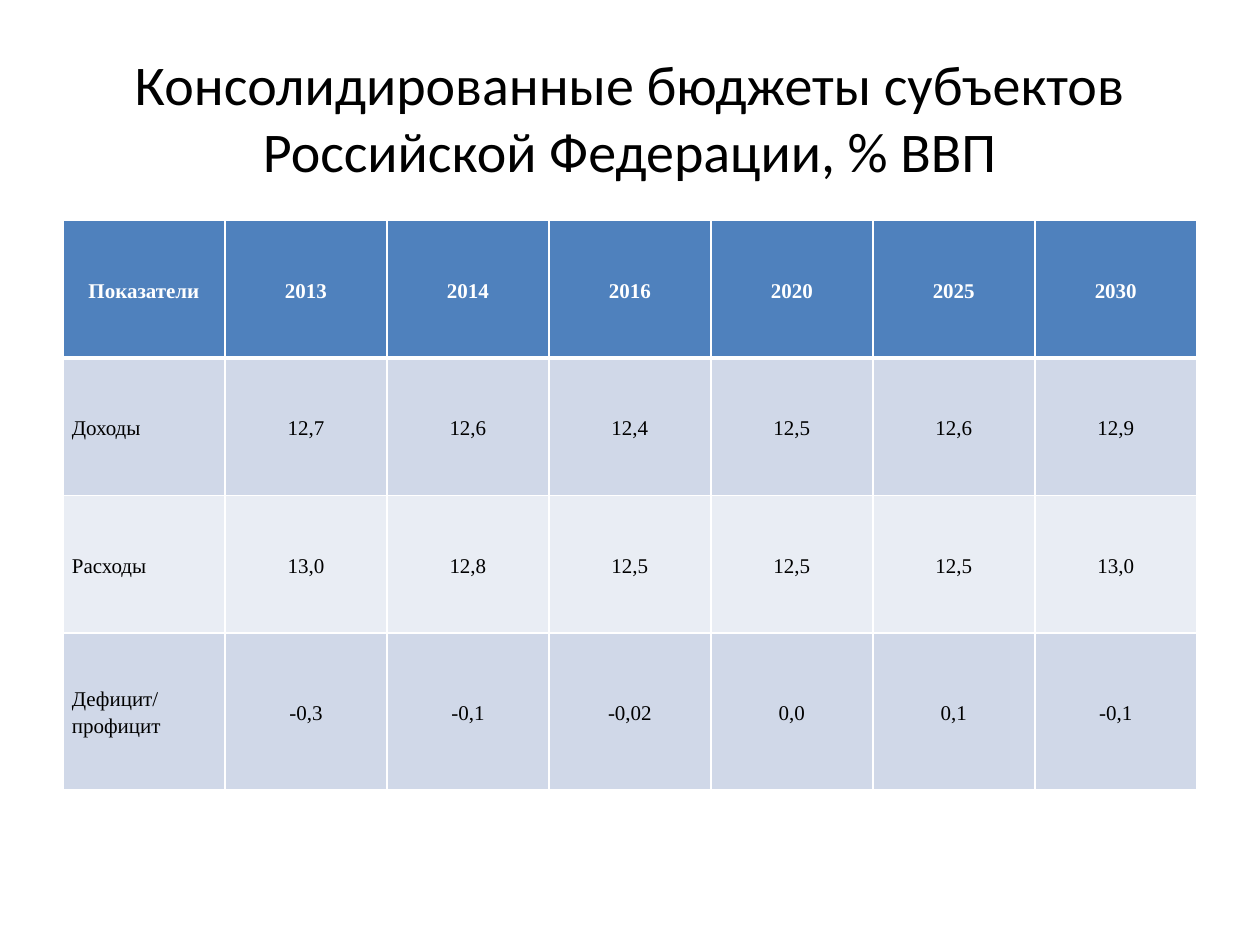
import pptx
import pptx.dml.color
import pptx.enum.text
import pptx.oxml
import pptx.oxml.ns
import pptx.util
from pptx.util import Cm

ALIGN = pptx.enum.text.PP_ALIGN
MIDDLE = pptx.enum.text.MSO_ANCHOR.MIDDLE
HEADER_FILL = "4F81BD"
BAND_FILLS = ("D0D8E8", "E9EDF4")
ROW_HEIGHTS = (2.77, 2.77, 2.77, 3.16)
ROWS = (
    ("Показатели", "2013", "2014", "2016", "2020", "2025", "2030"),
    ("Доходы", "12,7", "12,6", "12,4", "12,5", "12,6", "12,9"),
    ("Расходы", "13,0", "12,8", "12,5", "12,5", "12,5", "13,0"),
    ("Дефицит/профицит", "-0,3", "-0,1", "-0,02", "0,0", "0,1", "-0,1"),
)


def color(value):
    return pptx.dml.color.RGBColor.from_string(value)


def apply_format(target, values):
    for name, value in values.items():
        setattr(target, name, value)


def write_text(paragraph, text, alignment, font_color, font_format):
    paragraph.alignment = alignment
    run = paragraph.add_run()
    run.text = text
    apply_format(run.font, font_format)
    run.font.color.rgb = color(font_color)


def add_title(slide, left, top, width, height):
    shape = slide.shapes.add_textbox(Cm(left), Cm(top), Cm(width), Cm(height))
    apply_format(shape.text_frame, {"word_wrap": True, "vertical_anchor": MIDDLE})
    write_text(
        shape.text_frame.paragraphs[0],
        "Консолидированные бюджеты субъектов Российской Федерации, % ВВП",
        ALIGN.CENTER,
        "000000",
        {"name": "Calibri", "size": pptx.util.Pt(32)},
    )


def set_borders(cell, widths):
    properties = cell._tc.get_or_add_tcPr()
    namespace = pptx.oxml.ns.nsdecls("a")
    for side, width in widths.items():
        properties.append(pptx.oxml.parse_xml(
            f'<a:ln{side} {namespace} w="{pptx.util.Pt(width)}"><a:solidFill>'
            f'<a:srgbClr val="FFFFFF"/></a:solidFill></a:ln{side}>'
        ))


def fill_cell(cell, text, row_index, column_index):
    is_header = row_index == 0
    apply_format(cell, {
        "vertical_anchor": MIDDLE,
        "margin_left": Cm(0.18),
        "margin_right": Cm(0.18),
        "margin_top": 0,
        "margin_bottom": 0,
    })
    set_borders(cell, {
        "L": 1,
        "R": 1,
        "T": 3 if row_index == 1 else 1,
        "B": 3 if is_header else 1,
    })
    cell.fill.solid()
    fill = HEADER_FILL if is_header else BAND_FILLS[(row_index - 1) % 2]
    cell.fill.fore_color.rgb = color(fill)
    paragraph = cell.text_frame.paragraphs[0]
    paragraph.line_spacing = 1.15
    write_text(
        paragraph,
        text,
        ALIGN.CENTER if is_header or column_index else ALIGN.LEFT,
        "FFFFFF" if is_header else "000000",
        {"name": "Times New Roman", "size": pptx.util.Pt(12), "bold": is_header},
    )


def add_budget_table(slide, left, top, width):
    table = slide.shapes.add_table(
        len(ROWS), len(ROWS[0]), Cm(left), Cm(top), Cm(width), Cm(sum(ROW_HEIGHTS))
    ).table
    for row, height in zip(table.rows, ROW_HEIGHTS):
        row.height = Cm(height)
    for row_index, texts in enumerate(ROWS):
        for column_index, text in enumerate(texts):
            fill_cell(table.cell(row_index, column_index), text, row_index, column_index)


def main():
    presentation = pptx.Presentation()
    apply_format(presentation, {"slide_width": Cm(25.4), "slide_height": Cm(19.05)})
    slide = presentation.slides.add_slide(presentation.slide_layouts[6])
    margin = 1.27
    width = 25.4 - 2 * margin
    add_title(slide, margin, 0.76, width, 3.18)
    add_budget_table(slide, margin, 4.45, width)
    presentation.save("out.pptx")


if __name__ == "__main__":
    main()
